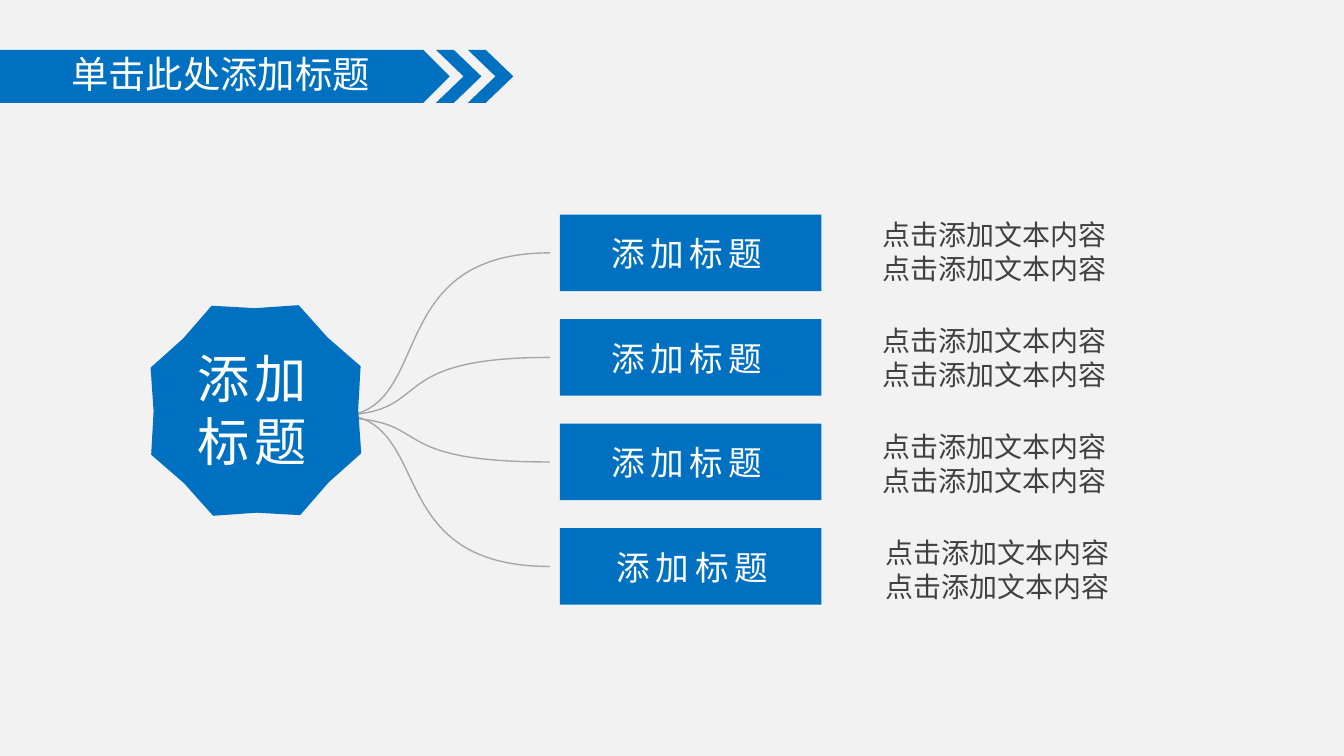
"""Build a mind-map slide: one hub, four titled branches with body text."""
from lxml import etree
from pptx import Presentation
from pptx.dml.color import RGBColor
from pptx.enum.shapes import MSO_SHAPE
from pptx.enum.text import MSO_ANCHOR, MSO_AUTO_SIZE
from pptx.oxml.ns import qn
from pptx.util import Pt

PLATE, CHEVRON = MSO_SHAPE.PENTAGON, MSO_SHAPE.CHEVRON
RECT, STAR = MSO_SHAPE.RECTANGLE, MSO_SHAPE.STAR_8_POINT
TOP, MIDDLE = MSO_ANCHOR.TOP, MSO_ANCHOR.MIDDLE
GROW = MSO_AUTO_SIZE.SHAPE_TO_FIT_TEXT

FONT = "Noto Sans CJK SC"
COLORS = {"back": "F2F2F2", "blue": "0070C0", "white": "FFFFFF",
          "body": "404040", "curve": "A6A6A6"}
FORMATS = {
    "heading": {"size": Pt(20), "color": "white", "spacing": 0},
    "hub": {"size": Pt(28), "color": "white", "spacing": 300},
    "label": {"size": Pt(18), "color": "white", "spacing": 300},
    "body": {"size": Pt(15), "color": "body", "spacing": 0},
}

HEADING = ["单击此处添加标题"]
HUB = ["添加", "标题"]
BODY = ["点击添加文本内容", "点击添加文本内容"]
BRANCHES = [
    {"label": ["添加标题"], "body": BODY, "label_x": 320.4, "body_x": 465.8, "bend_y": 226.1, "hub_y": 223.2},
    {"label": ["添加标题"], "body": BODY, "label_x": 320.4, "body_x": 465.8, "bend_y": 223.2, "hub_y": 222.5},
    {"label": ["添加标题"], "body": BODY, "label_x": 320.4, "body_x": 465.8, "bend_y": 223.2, "hub_y": 223.9},
    {"label": ["添加标题"], "body": BODY, "label_x": 323.3, "body_x": 467.3, "bend_y": 219.6, "hub_y": 221.8},
]
CARD_TOP, CARD_PITCH, CARD_H = 115, 56, 41
BODY_TOP, BODY_PITCH = 113, 56.8
CURVE_X = (294.6, 200.9, 235.4, 177.1)


def rgb(name):
    return RGBColor.from_string(COLORS[name])


def add_block(shapes, kind, box, adjust=None):
    shape = shapes.add_shape(kind, *map(Pt, box))
    shape.shadow.inherit = False
    shape.fill.solid()
    shape.fill.fore_color.rgb = rgb("blue")
    shape.line.fill.background()
    if adjust is not None:
        shape.adjustments[0] = adjust
    return shape


def write(shape, lines, style, wrap, anchor=TOP):
    tf = shape.text_frame
    for name, value in {"word_wrap": wrap, "auto_size": GROW, "vertical_anchor": anchor}.items():
        setattr(tf, name, value)
    fmt = FORMATS[style]
    for i, line in enumerate(lines):
        p = tf.add_paragraph() if i else tf.paragraphs[0]
        p.alignment = 1
        r = p.add_run()
        r.text = line
        for name, value in {"name": FONT, "size": fmt["size"]}.items():
            setattr(r.font, name, value)
        r.font.color.rgb = rgb(fmt["color"])
        props = r._r.get_or_add_rPr()
        props.set("spc", str(fmt["spacing"]))
        etree.SubElement(props, qn("a:ea"), typeface=FONT)


def add_text(shapes, box, lines, style, wrap):
    write(shapes.add_textbox(*map(Pt, box)), lines, style, wrap)


def add_curve(shapes, points):
    start, *rest = [(Pt(x), Pt(y)) for x, y in points]
    builder = shapes.build_freeform(*start)
    builder.add_line_segments(rest, close=False)
    curve = builder.convert_to_shape()
    curve.shadow.inherit = False
    curve.fill.background()
    curve.line.color.rgb = rgb("curve")
    curve.line.width = Pt(0)
    path = next(curve._element.iter(qn("a:path")))
    bezier = etree.SubElement(path, qn("a:cubicBezTo"))
    for segment in path.findall(qn("a:lnTo")):
        bezier.append(segment[0])
        path.remove(segment)


def main():
    prs = Presentation()
    prs.slide_width, prs.slide_height = Pt(720), Pt(405)
    s = prs.slides.add_slide(prs.slide_layouts[6])
    s.background.fill.solid()
    s.background.fill.fore_color.rgb = rgb("back")

    add_block(s.shapes, PLATE, (0, 26.8, 241, 28.3))
    add_text(s.shapes, (31, 24, 194.4, 33.8), HEADING, "heading", True)
    for x in (233.6, 250.7):
        add_block(s.shapes, CHEVRON, (x, 26.8, 24.3, 28.3), 0.606)

    for i, branch in enumerate(BRANCHES):
        middle = CARD_TOP + i * CARD_PITCH + CARD_H / 2
        ys = (middle, middle, branch["bend_y"], branch["hub_y"])
        add_curve(s.shapes, zip(CURVE_X, ys))

    hub = s.shapes.add_group_shape().shapes
    add_block(hub, STAR, (76.2, 159, 121.8, 121.8), 0.45).rotation = 22.1
    add_text(hub, (98.5, 182.2, 77, 75), HUB, "hub", False)

    for i, branch in enumerate(BRANCHES):
        top = CARD_TOP + i * CARD_PITCH
        card = s.shapes.add_group_shape().shapes
        add_block(card, RECT, (300, top, 140, CARD_H))
        label = add_block(card, RECT, (branch["label_x"], top + 6.2, 99.4, 29))
        write(label, branch["label"], "label", False, MIDDLE)
        body_box = (branch["body_x"], BODY_TOP + i * BODY_PITCH, 159, 44)
        add_text(s.shapes, body_box, branch["body"], "body", True)

    prs.save("out.pptx")


if __name__ == "__main__":
    main()
